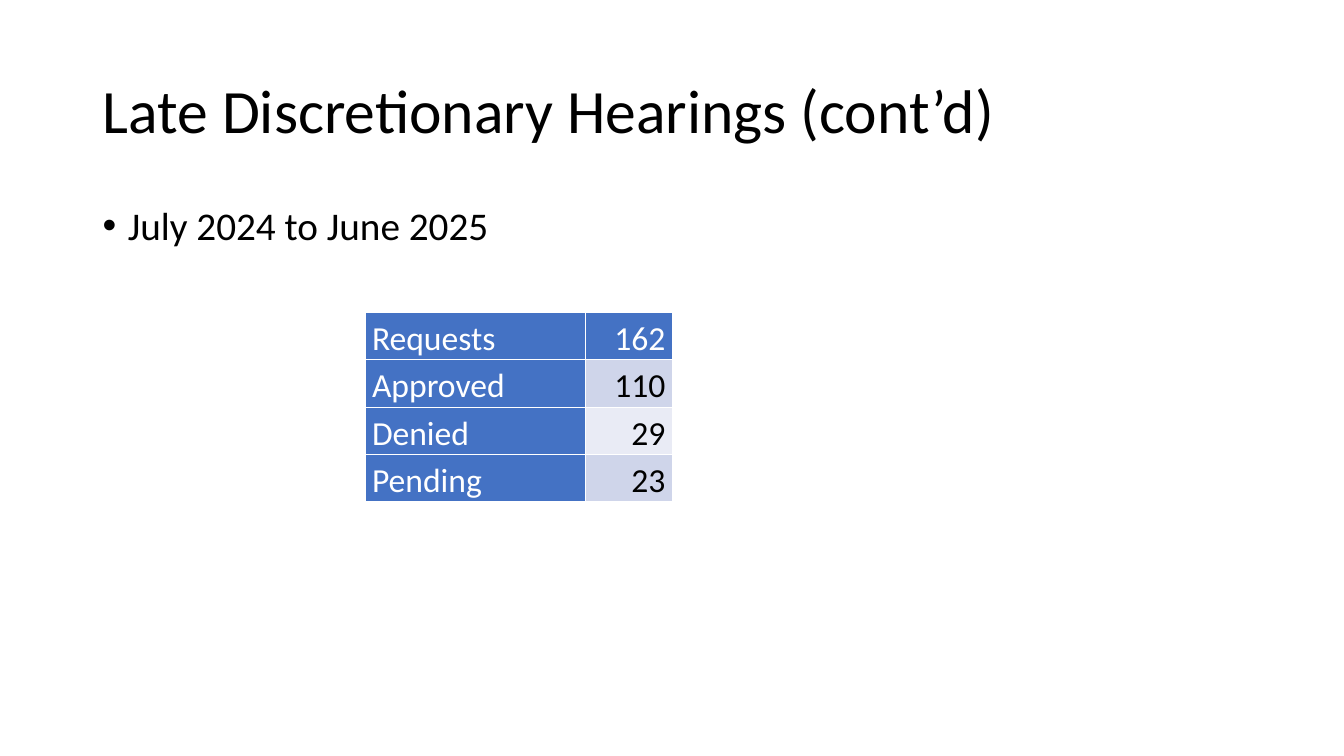
from lxml import etree
from pptx import Presentation
from pptx.dml.color import RGBColor
from pptx.enum.text import MSO_ANCHOR as Anchor, PP_ALIGN as Align
from pptx.oxml.ns import qn
from pptx.util import Inches, Pt

TITLE = "Late Discretionary Hearings (cont’d)"
PERIOD = "July 2024 to June 2025"
HEARINGS = [("Requests", 162), ("Approved", 110), ("Denied", 29), ("Pending", 23)]

FONT = "Calibri"
COLOURS = {"ink": "000000", "white": "FFFFFF", "header": "4472C4",
           "band_dark": "CFD5EA", "band_light": "E9EBF5"}

TITLE_BOX = (0.92, 0.4, 11.5, 1.45)
PERIOD_BOX = (0.92, 2, 11.5, 4.76)
TABLE_LEFT, TABLE_TOP = 3.62, 3.1
COLUMN_WIDTHS = (2.19, 0.86)
ROW_HEIGHT = 0.47
BULLET_INDENT = 0.25

TITLE_FORMAT = {"line_spacing": 0.9}
PERIOD_FORMAT = {"line_spacing": 0.9, "space_before": Pt(10)}
CELL_FORMAT = {"line_spacing": 1.15, "space_after": Pt(8)}
CELL_MARGINS = {"margin_left": Inches(0.07), "margin_right": Inches(0.07),
                "margin_top": 0, "margin_bottom": 0}
TABLE_FLAGS = {"first_row": False, "horz_banding": False}


def set_all(target, values):
    for name, value in values.items():
        setattr(target, name, value)


def rgb(name):
    return RGBColor.from_string(COLOURS[name])


def write(paragraph, text, size, colour, layout):
    set_all(paragraph, layout)
    run = paragraph.add_run()
    run.text = text
    set_all(run.font, {"name": FONT, "size": Pt(size), "bold": False})
    run.font.color.rgb = rgb(colour)


def add_text(slide, box, text, size, layout, anchor):
    frame = slide.shapes.add_textbox(*map(Inches, box)).text_frame
    set_all(frame, {"word_wrap": True, "vertical_anchor": anchor})
    write(frame.paragraphs[0], text, size, "ink", layout)
    return frame.paragraphs[0]


def add_bullet(paragraph):
    properties = paragraph._p.get_or_add_pPr()
    properties.set("marL", str(Inches(BULLET_INDENT)))
    properties.set("indent", str(-Inches(BULLET_INDENT)))
    etree.SubElement(properties, qn("a:buFont"), typeface="Arial")
    etree.SubElement(properties, qn("a:buChar"), char="•")


def add_borders(cell):
    """Put a thin white line on all four sides, ahead of the cell fill."""
    properties = cell._tc.get_or_add_tcPr()
    for position, side in enumerate(("a:lnL", "a:lnR", "a:lnT", "a:lnB")):
        line = etree.Element(qn(side), w=str(Pt(1)))
        fill = etree.SubElement(line, qn("a:solidFill"))
        etree.SubElement(fill, qn("a:srgbClr"), val=COLOURS["white"])
        properties.insert(position, line)


def add_hearings(slide):
    table = slide.shapes.add_table(
        len(HEARINGS), len(COLUMN_WIDTHS), Inches(TABLE_LEFT), Inches(TABLE_TOP),
        Inches(sum(COLUMN_WIDTHS)), Inches(ROW_HEIGHT * len(HEARINGS))).table
    set_all(table, TABLE_FLAGS)
    for column, width in zip(table.columns, COLUMN_WIDTHS):
        column.width = Inches(width)
    for r, hearing in enumerate(HEARINGS):
        table.rows[r].height = Inches(ROW_HEIGHT)
        for c, value in enumerate(hearing):
            cell = table.cell(r, c)
            is_header = r == 0 or c == 0
            band = "band_dark" if r % 2 else "band_light"
            set_all(cell, CELL_MARGINS)
            cell.fill.solid()
            cell.fill.fore_color.rgb = rgb("header" if is_header else band)
            add_borders(cell)
            alignment = Align.RIGHT if c else Align.LEFT
            write(cell.text_frame.paragraphs[0], str(value), 24,
                  "white" if is_header else "ink",
                  {**CELL_FORMAT, "alignment": alignment})


def main():
    deck = Presentation()
    set_all(deck, {"slide_width": Inches(13.33), "slide_height": Inches(7.5)})
    slide = deck.slides.add_slide(deck.slide_layouts[6])
    add_text(slide, TITLE_BOX, TITLE, 44, TITLE_FORMAT, Anchor.MIDDLE)
    add_bullet(add_text(slide, PERIOD_BOX, PERIOD, 28, PERIOD_FORMAT, Anchor.TOP))
    add_hearings(slide)
    deck.save("out.pptx")


if __name__ == "__main__":
    main()
